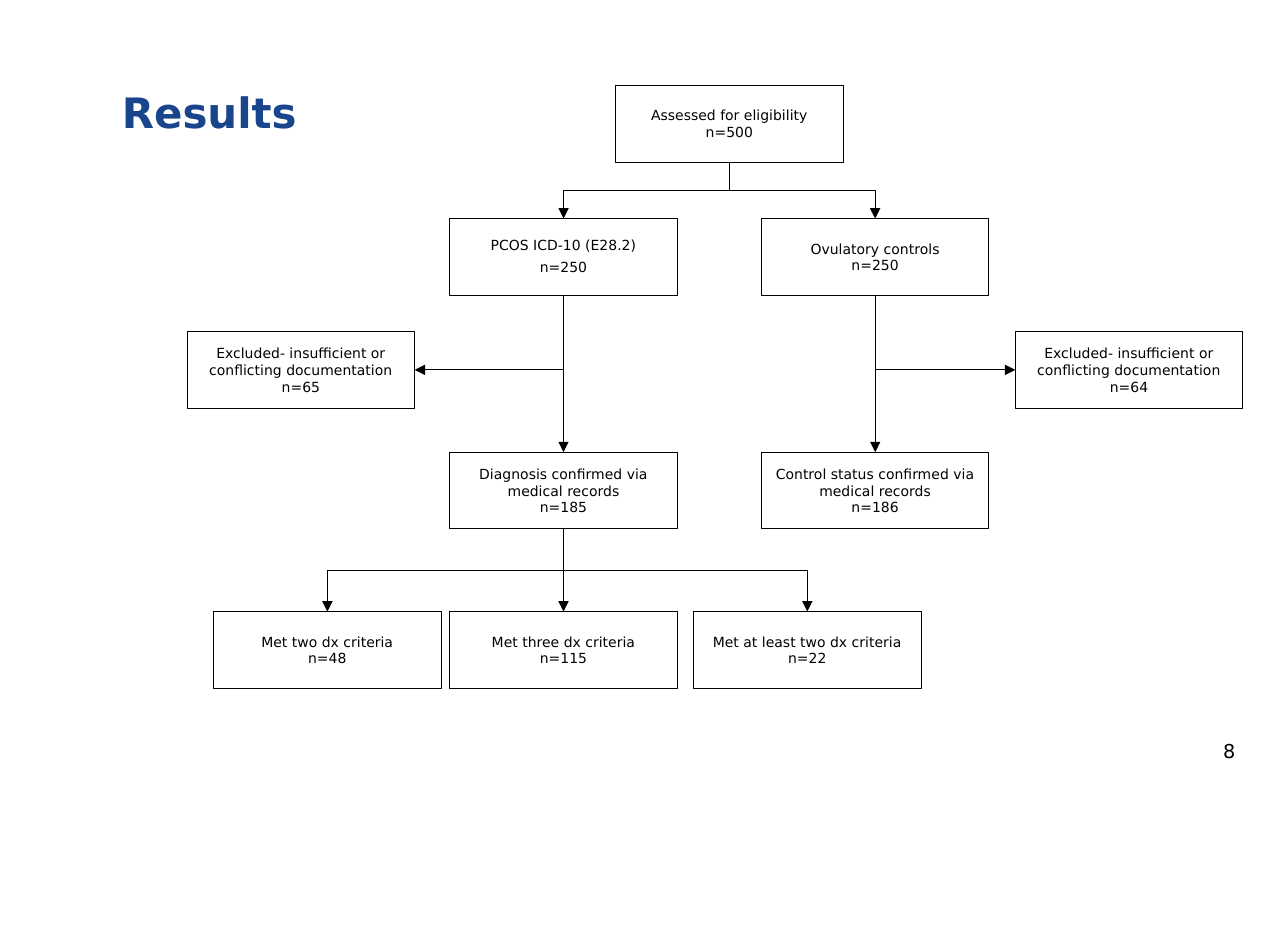
from lxml import etree
from pptx import Presentation
from pptx.dml.color import RGBColor
from pptx.enum.shapes import MSO_CONNECTOR, MSO_SHAPE
from pptx.enum.text import MSO_ANCHOR, MSO_AUTO_SIZE, PP_ALIGN
from pptx.oxml.ns import qn
from pptx.util import Inches, Pt

BLACK = RGBColor(0x00, 0x00, 0x00)
WHITE = RGBColor(0xFF, 0xFF, 0xFF)
NAVY = RGBColor(0x19, 0x45, 0x8D)
STRAIGHT, ELBOW = MSO_CONNECTOR.STRAIGHT, MSO_CONNECTOR.ELBOW
RECT = MSO_SHAPE.RECTANGLE
MIDDLE, BOTTOM = MSO_ANCHOR.MIDDLE, MSO_ANCHOR.BOTTOM
LEFT, CENTER, RIGHT = PP_ALIGN.LEFT, PP_ALIGN.CENTER, PP_ALIGN.RIGHT
NO_FIT, FIT_SHAPE = MSO_AUTO_SIZE.NONE, MSO_AUTO_SIZE.SHAPE_TO_FIT_TEXT
TOP_SITE, LEFT_SITE, BOTTOM_SITE, RIGHT_SITE = range(4)

BOX_W, BOX_H = Inches(1.81), Inches(0.61)
CASE_X, CONTROL_X = 3.58, 6.06
ROWS = [0.68, 1.74, 2.64, 3.6, 4.87]
EXCLUDED = "Excluded- insufficient or conflicting documentation"


def set_format(target, values):
    """Set each attribute named in a dict of format values."""
    for name, value in values.items():
        setattr(target, name, value)


class FlowSlide:
    """Hold the style and the current slide of a flow chart."""

    font = {"name": "DejaVu Sans", "size": Pt(8), "bold": False}
    bare = {"margin_left": 0, "margin_right": 0, "margin_top": 0,
            "margin_bottom": 0, "word_wrap": True, "vertical_anchor": BOTTOM}

    def __init__(self, prs):
        """Add a title-only slide."""
        self.s = prs.slides.add_slide(prs.slide_layouts[5])

    def add_text(self, p, text, align, color=BLACK, spacing=None, **font):
        """Fill one paragraph with a formatted run."""
        set_format(p, {"alignment": align, "line_spacing": spacing})
        r = p.add_run()
        r.text = text
        set_format(r.font, {**self.font, **font})
        r.font.color.rgb = color

    def title(self, text):
        """Place and format the title placeholder."""
        sp = self.s.shapes.title
        set_format(sp, {"left": Inches(0.97), "top": Inches(0.27),
                        "width": Inches(8.84), "height": Inches(0.82)})
        tf = sp.text_frame
        set_format(tf, {**self.bare, "auto_size": NO_FIT})
        self.add_text(tf.paragraphs[0], text, LEFT, NAVY, 0.85, size=Pt(24), bold=True)

    def page_number(self, text):
        """Add the page number at the lower right."""
        sp = self.s.shapes.add_textbox(Inches(7.44), Inches(5.87), Inches(2.39), Inches(0.2))
        tf = sp.text_frame
        set_format(tf, {**self.bare, "auto_size": FIT_SHAPE})
        self.add_text(tf.paragraphs[0], text, RIGHT, spacing=1.1, size=Pt(11))

    def box(self, x, row, label, count, **first_format):
        """Add a flow chart box with a label and a count."""
        sp = self.s.shapes.add_shape(RECT, Inches(x), Inches(ROWS[row]), BOX_W, BOX_H)
        sp.shadow.inherit = False
        sp.fill.solid()
        sp.fill.fore_color.rgb = WHITE
        sp.line.color.rgb = BLACK
        sp.line.width = Pt(0.5)
        tf = sp.text_frame
        set_format(tf, {"word_wrap": True, "vertical_anchor": MIDDLE})
        self.add_text(tf.paragraphs[0], label, CENTER)
        set_format(tf.paragraphs[0], first_format)
        self.add_text(tf.add_paragraph(), f"n={count}", CENTER)
        return sp

    def connector(self, kind, x, y, target, site):
        """Add an arrow from a point to a connection site of a box."""
        c = self.s.shapes.add_connector(kind, x, y, x, y)
        c.end_connect(target, site)
        c.line.color.rgb = BLACK
        c.line.width = Pt(0.5)
        sp_pr = c._element.spPr
        etree.SubElement(sp_pr.find(qn("a:ln")), qn("a:tailEnd"), type="triangle")
        etree.SubElement(sp_pr, qn("a:effectLst"))
        return c

    def down(self, source, target):
        """Link the bottom of one box to the top of a lower one."""
        x, y = source.left + BOX_W // 2, source.top + BOX_H
        shift, drop = target.left - source.left, target.top - y
        c = self.connector(ELBOW if shift else STRAIGHT, x, y, target, TOP_SITE)
        c.begin_connect(source, BOTTOM_SITE)
        if shift:
            set_format(c, {"left": x + (shift - drop) // 2,
                           "top": y + (drop - abs(shift)) // 2,
                           "width": drop, "height": abs(shift)})
            xfrm = c._element.spPr.find(qn("a:xfrm"))
            xfrm.set("rot", str((270 if shift > 0 else 90) * 60000))
            xfrm.set("flipH", "1" if shift > 0 else "0")

    def aside(self, source, target):
        """Branch from the line below a box to a box at its side."""
        site = RIGHT_SITE if target.left < source.left else LEFT_SITE
        self.connector(STRAIGHT, source.left + BOX_W // 2,
                       target.top + BOX_H // 2, target, site)


def main():
    """Build the participant flow slide."""
    prs = Presentation()
    prs.slide_width, prs.slide_height = Inches(10.25), Inches(7.5)
    flow = FlowSlide(prs)
    flow.title("Results")
    flow.page_number("8")

    assessed = flow.box(4.9, 0, "Assessed for eligibility", 500)
    cases = flow.box(CASE_X, 1, "PCOS ICD-10 (E28.2)", 250,
                     line_spacing=0.9, space_after=Pt(3))
    controls = flow.box(CONTROL_X, 1, "Ovulatory controls", 250)
    cases_out = flow.box(1.49, 2, EXCLUDED, 65)
    controls_out = flow.box(8.08, 2, EXCLUDED, 64)
    diagnosed = flow.box(CASE_X, 3, "Diagnosis confirmed via medical records", 185)
    confirmed = flow.box(CONTROL_X, 3, "Control status confirmed via medical records", 186)
    criteria = [flow.box(x, 4, f"Met {met} dx criteria", count)
                for x, met, count in [(1.7, "two", 48), (CASE_X, "three", 115),
                                      (5.52, "at least two", 22)]]

    links = [(assessed, cases), (assessed, controls),
             (cases, diagnosed), (controls, confirmed)]
    for source, target in links + [(diagnosed, b) for b in criteria]:
        flow.down(source, target)
    flow.aside(cases, cases_out)
    flow.aside(controls, controls_out)
    prs.save("out.pptx")


if __name__ == "__main__":
    main()
